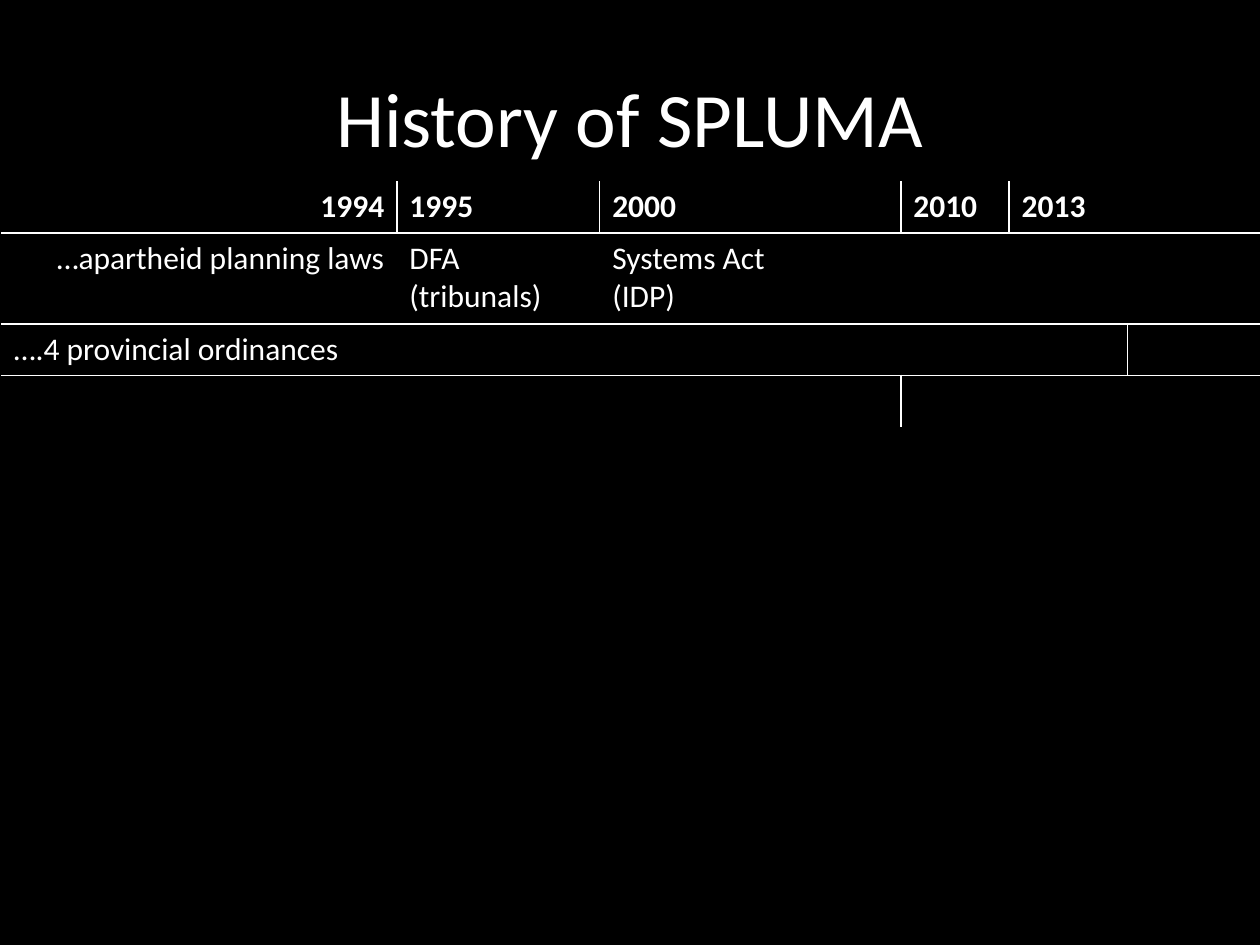
import pptx
import pptx.util
import pptx.dml.color
import pptx.enum.text
import pptx.oxml
import pptx.oxml.ns

Inches = pptx.util.Inches
Pt = pptx.util.Pt
ALIGN = pptx.enum.text.PP_ALIGN
ANCHOR = pptx.enum.text.MSO_ANCHOR
BLACK = pptx.dml.color.RGBColor(0, 0, 0)
WHITE = pptx.dml.color.RGBColor(255, 255, 255)
PLAIN_STYLE = "{2D5ABB26-0587-4C30-8999-92F81FD0307C}"

COLUMN_WIDTHS = [3.14, 1.61, 0.58, 1.81, 0.86, 0.94, 1.06]
ROW_HEIGHTS = [0.41, 0.72, 0.41, 0.41]
# row, column, columns spanned, text, border sides
CELLS = [
    (0, 0, 1, "1994", "RB"),
    (0, 1, 1, "1995", "LRB"),
    (0, 2, 2, "2000", "LRB"),
    (0, 4, 1, "2010", "LRB"),
    (0, 5, 2, "2013", "LB"),
    (1, 0, 1, "…apartheid planning laws", "TB"),
    (1, 1, 1, "DFA\n(tribunals)", "TB"),
    (1, 2, 3, "Systems Act\n(IDP)", "TB"),
    (1, 5, 2, "", "TB"),
    (2, 0, 6, "….4 provincial ordinances", "RTB"),
    (2, 6, 1, "", "LTB"),
    (3, 0, 1, "", "T"),
    (3, 1, 2, "", "T"),
    (3, 3, 1, "", "RT"),
    (3, 4, 3, "", "LT"),
]


def write_text(frame, text, align, font_format):
    frame.text = text
    for para in frame.paragraphs:
        para.alignment = align
        for font in [para.font] + [span.font for span in para.runs]:
            for name, value in font_format.items():
                setattr(font, name, value)
            font.color.rgb = WHITE


def add_title(page, text):
    box = page.shapes.add_textbox(Inches(0.5), Inches(0.3), Inches(9), Inches(1.25))
    frame_format = {"word_wrap": True, "vertical_anchor": ANCHOR.MIDDLE}
    for name, value in frame_format.items():
        setattr(box.text_frame, name, value)
    write_text(box.text_frame, text, ALIGN.CENTER, {"name": "Calibri", "size": Pt(44)})


def draw_borders(cell, sides):
    properties = cell._tc.get_or_add_tcPr()
    ordered_sides = [side for side in "LRTB" if side in sides]
    for position, side in enumerate(ordered_sides):
        line = pptx.oxml.parse_xml(
            f'<a:ln{side} {pptx.oxml.ns.nsdecls("a")} w="{Pt(1)}">'
            f'<a:solidFill><a:srgbClr val="{WHITE}"/></a:solidFill></a:ln{side}>'
        )
        properties.insert(position, line)


def add_timeline(page):
    frame = page.shapes.add_table(
        len(ROW_HEIGHTS), len(COLUMN_WIDTHS), Inches(0.01), Inches(1.44),
        Inches(sum(COLUMN_WIDTHS)), Inches(sum(ROW_HEIGHTS)),
    )
    table = frame.table
    table.horz_banding = False
    table._tbl.tblPr.find(pptx.oxml.ns.qn("a:tableStyleId")).text = PLAIN_STYLE
    for column, width in zip(table.columns, COLUMN_WIDTHS):
        column.width = Inches(width)
    for row, height in zip(table.rows, ROW_HEIGHTS):
        row.height = Inches(height)
    for row, column, columns, text, sides in CELLS:
        cell = table.cell(row, column)
        if columns > 1:
            cell.merge(table.cell(row, column + columns - 1))
        align = ALIGN.RIGHT if column == 0 and row < 2 else ALIGN.LEFT
        font_format = {"name": "Calibri", "size": Pt(18), "bold": row == 0}
        write_text(cell.text_frame, text, align, font_format)
        for offset in range(columns):
            part = table.cell(row, column + offset)
            part.fill.background()
            hidden = ("L" if offset else "") + ("R" if offset < columns - 1 else "")
            shown = sides if offset == 0 else sides.translate(str.maketrans("", "", hidden))
            draw_borders(part, shown)


def main():
    deck = pptx.Presentation()
    deck.slide_width = Inches(10)
    deck.slide_height = Inches(7.5)
    page = deck.slides.add_slide(deck.slide_layouts[6])
    page.background.fill.solid()
    page.background.fill.fore_color.rgb = BLACK
    add_title(page, "History of SPLUMA")
    add_timeline(page)
    deck.save("out.pptx")


if __name__ == "__main__":
    main()
